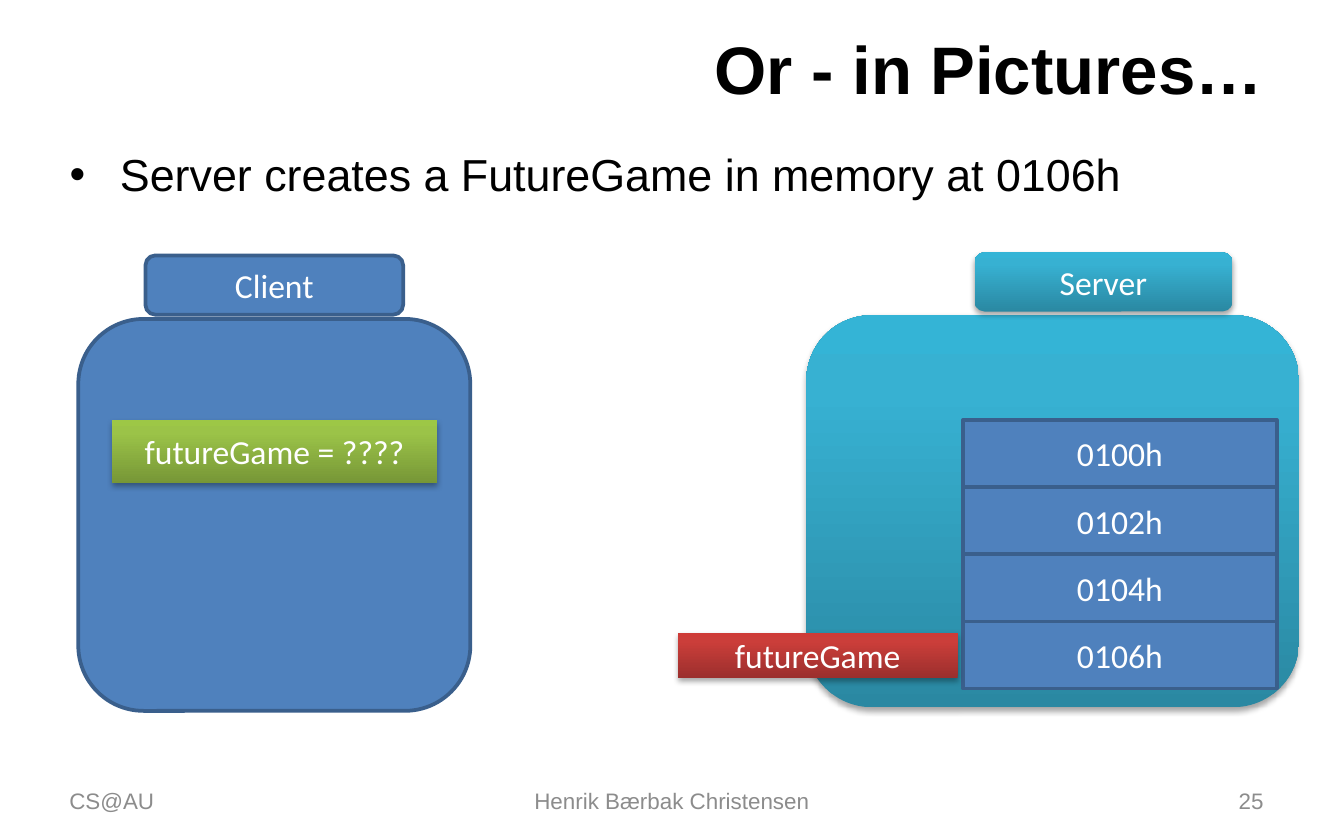
from copy import deepcopy
from dataclasses import dataclass

from lxml import etree
from pptx import Presentation
from pptx.dml.color import RGBColor
from pptx.enum import shapes, text
from pptx.oxml import ns
from pptx.util import Cm, Pt

RECT = shapes.MSO_SHAPE.RECTANGLE
ROUND = shapes.MSO_SHAPE.ROUNDED_RECTANGLE
LEFT, CENTER, RIGHT = text.PP_ALIGN.LEFT, text.PP_ALIGN.CENTER, text.PP_ALIGN.RIGHT


@dataclass(frozen=True)
class Theme:
    heading_font: str = "Arial"
    label_font: str = "Calibri"
    ink: str = "000000"
    muted: str = "8C8C8C"
    light: str = "FFFFFF"
    blue: str = "4F81BD"
    blue_edge: str = "3A5F8C"
    # Gradients run from the bottom edge up: stops at 0, 80 and 100 %.
    teal: tuple = ("2A88A2", "37B1D2", "34B4D6")
    green: tuple = ("779737", "9BC348", "9DC746")
    red: tuple = ("9C2F2D", "CB3E3A", "CE3B37")
    title_size: int = 36
    body_size: int = 24
    label_size: int = 18
    footer_size: int = 12


THEME = Theme()


def write(sp, content, *, font=THEME.heading_font, size, color=THEME.ink,
          bold=False, align=LEFT, anchor=text.MSO_ANCHOR.MIDDLE):
    tf = sp.text_frame
    tf.word_wrap = True
    tf.auto_size = text.MSO_AUTO_SIZE.NONE
    tf.vertical_anchor = anchor
    p = tf.paragraphs[0]
    p.alignment = align
    p.space_before = Pt(0)
    r = p.add_run()
    r.text = content
    r.font.name = font
    r.font.size = Pt(size)
    r.font.bold = bold
    r.font.color.rgb = RGBColor.from_string(color)


def place(sp, left, top, width, height):
    sp.left, sp.top, sp.width, sp.height = Cm(left), Cm(top), Cm(width), Cm(height)


def add_block(s, kind, box, label=None):
    sp = s.shapes.add_shape(kind, *map(Cm, box))
    sp.shadow.inherit = False
    if label:
        write(sp, label, font=THEME.label_font, size=THEME.label_size,
              color=THEME.light, align=CENTER)
    return sp


def add_flat(s, kind, box, label=None):
    """Plain blue block with a darker outline."""
    sp = add_block(s, kind, box, label)
    sp.fill.solid()
    sp.fill.fore_color.rgb = RGBColor.from_string(THEME.blue)
    sp.line.color.rgb = RGBColor.from_string(THEME.blue_edge)
    sp.line.width = Pt(2)


def add_glossy(s, kind, box, colors, label=None):
    """Block with a vertical gradient and a soft shadow, without outline."""
    sp = add_block(s, kind, box, label)
    sp.line.fill.background()
    sp.fill.gradient()
    sp.fill.gradient_angle = 90
    stop_list = sp.element.spPr.find(".//" + ns.qn("a:gsLst"))
    stop_list.append(deepcopy(stop_list[-1]))
    for stop, position, color in zip(sp.fill.gradient_stops, (0, 0.8, 1), colors):
        stop.position = position
        stop.color.rgb = RGBColor.from_string(color)
    effects = sp.element.spPr.find(ns.qn("a:effectLst"))
    shadow = etree.SubElement(effects, ns.qn("a:outerShdw"), blurRad=str(Pt(3.1)),
                              dist=str(Pt(1.8)), dir="5400000", rotWithShape="0")
    tint = etree.SubElement(shadow, ns.qn("a:srgbClr"), val=THEME.ink)
    etree.SubElement(tint, ns.qn("a:alpha"), val="35000")


def add_headings(s):
    title, body = s.shapes.title, s.placeholders[1]
    place(title, 1.27, 0.46, 22.86, 1.65)
    write(title, "Or - in Pictures…", size=THEME.title_size, bold=True, align=RIGHT)
    place(body, 1.06, 2.65, 23.07, 11.99)
    write(body, "Server creates a FutureGame in memory at 0106h",
          size=THEME.body_size, anchor=text.MSO_ANCHOR.TOP)


def add_footer(s):
    for content, left, width, align in (
        ("CS@AU", 1.06, 5.93, LEFT),
        ("Henrik Bærbak Christensen", 8.68, 8.04, CENTER),
        ("25", 18.2, 5.93, RIGHT),
    ):
        sp = s.shapes.add_textbox(Cm(left), Cm(14.71), Cm(width), Cm(0.84))
        write(sp, content, size=THEME.footer_size, color=THEME.muted, align=align)


def add_client(s):
    add_flat(s, ROUND, (1.48, 6.03, 7.41, 7.41))
    add_glossy(s, RECT, (2.12, 7.94, 6.14, 1.19), THEME.green, "futureGame = ????")
    add_flat(s, ROUND, (2.75, 4.83, 4.87, 1.12), "Client")


def add_server(s):
    add_glossy(s, ROUND, (15.24, 5.96, 9.31, 7.41), THEME.teal)
    add_glossy(s, ROUND, (18.42, 4.77, 4.87, 1.12), THEME.teal, "Server")
    cell_height = 1.27
    for row in range(4):
        box = (18.2, 7.94 + row * cell_height, 5.93, cell_height)
        add_flat(s, RECT, box, f"{100 + 2 * row:04d}h")
    add_glossy(s, RECT, (12.81, 11.96, 5.29, 0.85), THEME.red, "futureGame")


def main():
    prs = Presentation()
    prs.slide_width, prs.slide_height = Cm(25.4), Cm(15.88)
    s = prs.slides.add_slide(prs.slide_layouts[1])
    add_headings(s)
    add_footer(s)
    add_client(s)
    add_server(s)
    prs.save("out.pptx")


if __name__ == "__main__":
    main()
